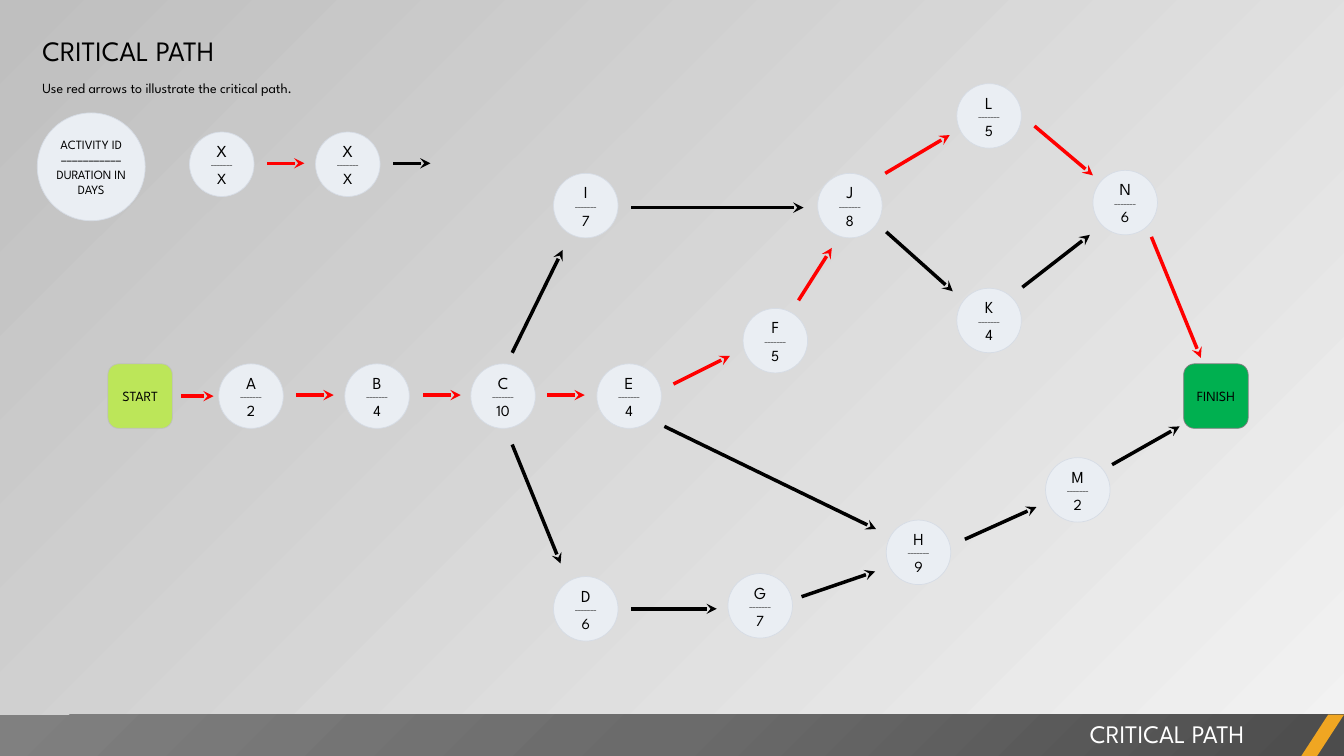
from dataclasses import dataclass

from lxml import etree
from pptx import Presentation
from pptx.dml.color import RGBColor
from pptx.enum import shapes, text
from pptx.oxml import parse_xml
from pptx.oxml import ns
from pptx.util import Inches, Pt


@dataclass(frozen=True)
class Theme:
    font: str = "League Spartan"
    ink: str = "000000"
    white: str = "FFFFFF"
    critical: str = "FF0000"
    node: str = "EAEEF3"
    node_line: str = "D6DCE5"
    start: str = "BCE659"
    start_line: str = "BFBFBF"
    finish: str = "00B050"
    finish_line: str = "808080"
    accent: str = "F0A622"
    background: tuple = ("F2F2F2", "BFBFBF")
    footer: tuple = ("4C4C4C", "6B6B6B", "808080")
    title_size: float = 20
    footer_size: float = 18
    id_size: float = 12
    duration_size: float = 11
    label_size: float = 10
    key_size: float = 9
    rule_size: float = 5
    arrow_width: float = 2.5


THEME = Theme()
NODE = 0.64
RULE = "–––––––"

# Activity: (duration, left, top) within the network
ACTIVITIES = {
    "A": (2, 1.1, 2.78), "B": (4, 2.35, 2.78), "C": (10, 3.6, 2.78),
    "E": (4, 4.85, 2.78), "I": (7, 4.42, 0.89), "D": (6, 4.42, 4.89),
    "G": (7, 6.15, 4.86), "H": (9, 7.72, 4.33), "M": (2, 9.3, 3.71),
    "J": (8, 7.04, 0.89), "F": (5, 6.3, 2.23), "L": (5, 8.42, 0),
    "K": (4, 8.42, 2.03), "N": (6, 9.77, 0.86),
}
# Arrows: (x1, y1, x2, y2) within the network
CRITICAL_ARROWS = [
    (0.73, 3.1, 1.05, 3.1),      # START-A
    (1.87, 3.09, 2.24, 3.09),    # A-B
    (3.13, 3.09, 3.5, 3.09),     # B-C
    (4.36, 3.09, 4.73, 3.09),    # C-E
    (5.61, 2.98, 6.17, 2.7),     # E-F
    (6.85, 2.15, 7.18, 1.63),    # F-J
    (7.71, 0.89, 8.35, 0.51),    # J-L
    (9.19, 0.42, 9.77, 0.91),    # L-N
    (10.35, 1.52, 10.84, 2.72),  # N-FINISH
]
OTHER_ARROWS = [
    (4.01, 2.67, 4.51, 1.65),    # C-I
    (5.19, 1.23, 6.9, 1.23),     # I-J
    (4.01, 3.58, 4.49, 4.76),    # C-D
    (5.19, 5.21, 6.04, 5.21),    # D-G
    (5.52, 3.4, 7.62, 4.42),     # E-H
    (6.88, 5.09, 7.61, 4.84),    # G-H
    (7.72, 1.47, 8.38, 2.06),    # J-K
    (9.07, 2.02, 9.74, 1.5),     # K-N
    (8.5, 4.52, 9.21, 4.2),      # H-M
    (9.96, 3.78, 10.63, 3.4),    # M-FINISH
]


def rgb(color):
    return RGBColor.from_string(color)


def write(frame, lines, align, color=THEME.ink):
    """Fill a text frame with (wording, size) lines."""
    frame.word_wrap = True
    for i, (wording, size) in enumerate(lines):
        paragraph = frame.paragraphs[0] if i == 0 else frame.add_paragraph()
        paragraph.text = wording
        paragraph.alignment = align
        paragraph.font.name = THEME.font
        paragraph.font.size = Pt(size)
        paragraph.font.color.rgb = rgb(color)


def add_block(slide, kind, box, fill, line=None):
    block = slide.shapes.add_shape(kind, *map(Inches, box))
    block.shadow.inherit = False
    block.fill.solid()
    block.fill.fore_color.rgb = rgb(fill)
    if line:
        block.line.color.rgb = rgb(line)
        block.line.width = Pt(0.5)
    else:
        block.line.fill.background()
    return block


def add_node(slide, kind, box, fill, line, lines):
    frame = add_block(slide, kind, box, fill, line).text_frame
    frame.margin_left = frame.margin_right = 0
    frame.margin_top = frame.margin_bottom = 0
    frame.vertical_anchor = text.MSO_ANCHOR.MIDDLE
    write(frame, lines, text.PP_ALIGN.CENTER)


def add_activity(slide, left, top, name, duration):
    lines = [(name, THEME.id_size), (RULE, THEME.rule_size),
             (str(duration), THEME.duration_size)]
    add_node(slide, shapes.MSO_SHAPE.OVAL, (left, top, NODE, NODE),
             THEME.node, THEME.node_line, lines)


def add_arrow(slide, left, top, ends, color):
    x1, y1, x2, y2 = ends
    arrow = slide.shapes.add_connector(
        shapes.MSO_CONNECTOR.STRAIGHT, Inches(left + x1), Inches(top + y1),
        Inches(left + x2), Inches(top + y2))
    arrow.line.color.rgb = rgb(color)
    arrow.line.width = Pt(THEME.arrow_width)
    etree.SubElement(arrow.line._get_or_add_ln(), ns.qn("a:tailEnd"), type="stealth")
    etree.SubElement(arrow._element.spPr, ns.qn("a:effectLst"))


def paint_background(slide):
    fill = slide.background.fill
    fill.gradient()
    fill.gradient_angle = 135
    for stop, color in zip(fill.gradient_stops, THEME.background):
        stop.color.rgb = rgb(color)


def build_header(slide, left, top, width):
    title = slide.shapes.title
    title.left, title.top = Inches(left), Inches(top)
    title.width, title.height = Inches(width), Inches(0.44)
    hint = slide.shapes.add_textbox(
        Inches(left), Inches(top + 0.46), Inches(width), Inches(0.27))
    for part, wording, size in (
            (title, "CRITICAL PATH", THEME.title_size),
            (hint, "Use red arrows to illustrate the critical path.", THEME.label_size)):
        frame = part.text_frame
        frame.margin_left = 0
        frame.vertical_anchor = text.MSO_ANCHOR.TOP
        frame.auto_size = text.MSO_AUTO_SIZE.NONE
        write(frame, [(wording, size)], text.PP_ALIGN.LEFT)


def build_legend(slide, left, top):
    key = ("ACTIVITY ID", "–––––––––––", "DURATION IN DAYS")
    add_node(slide, shapes.MSO_SHAPE.OVAL, (left, top, 1.07, 1.07), THEME.node,
             THEME.node_line, [(wording, THEME.key_size) for wording in key])
    for i, color in enumerate((THEME.critical, THEME.ink)):
        sample_left = left + 1.51 + 1.25 * i
        add_activity(slide, sample_left, top + 0.19, "X", "X")
        add_arrow(slide, sample_left, top, (0.77, 0.5, 1.14, 0.5), color)


def build_network(slide, left, top):
    # Start and finish
    for wording, x, fill, line in (
            ("START", 0, THEME.start, THEME.start_line),
            ("FINISH", 10.67, THEME.finish, THEME.finish_line)):
        add_node(slide, shapes.MSO_SHAPE.ROUNDED_RECTANGLE,
                 (left + x, top + 2.78, NODE, NODE), fill, line,
                 [(wording, THEME.label_size)])
    # Activities
    for name, (duration, x, y) in ACTIVITIES.items():
        add_activity(slide, left + x, top + y, name, duration)
    # Arrows
    for arrows, color in ((CRITICAL_ARROWS, THEME.critical), (OTHER_ARROWS, THEME.ink)):
        for ends in arrows:
            add_arrow(slide, left, top, ends, color)


def build_footer(slide, left, top, width, height):
    # Shaded bar
    bar = add_block(slide, shapes.MSO_SHAPE.RECTANGLE,
                    (left, top, width, height), THEME.footer[0])
    stops = "".join(f'<a:gs pos="{i * 50000}"><a:srgbClr val="{color}"/></a:gs>'
                    for i, color in enumerate(THEME.footer))
    shading = parse_xml(
        f'<a:gradFill {ns.nsdecls("a")} rotWithShape="1"><a:gsLst>{stops}</a:gsLst>'
        '<a:path path="circle"><a:fillToRect l="100000" t="100000"/></a:path></a:gradFill>')
    properties = bar._element.spPr
    properties.replace(properties.find(ns.qn("a:solidFill")), shading)
    # Slanted corner
    corner = add_block(slide, shapes.MSO_SHAPE.PARALLELOGRAM,
                       (left + width - 0.43, top, 0.43, height), THEME.accent)
    corner.adjustments[0] = 0.65
    # Caption
    caption = slide.shapes.add_textbox(
        Inches(left + 5.25), Inches(top - 0.01), Inches(7.19), Inches(0.4))
    write(caption.text_frame, [("CRITICAL PATH", THEME.footer_size)],
          text.PP_ALIGN.RIGHT, THEME.white)


def main():
    deck = Presentation()
    deck.slide_width, deck.slide_height = Inches(13.33), Inches(7.5)
    slide = deck.slides.add_slide(deck.slide_layouts[5])
    paint_background(slide)
    build_footer(slide, 0, 7.09, 13.33, 0.42)
    build_header(slide, 0.42, 0.28, 4.74)
    build_legend(slide, 0.37, 1.12)
    build_network(slide, 1.07, 0.83)
    deck.save("out.pptx")


if __name__ == "__main__":
    main()
